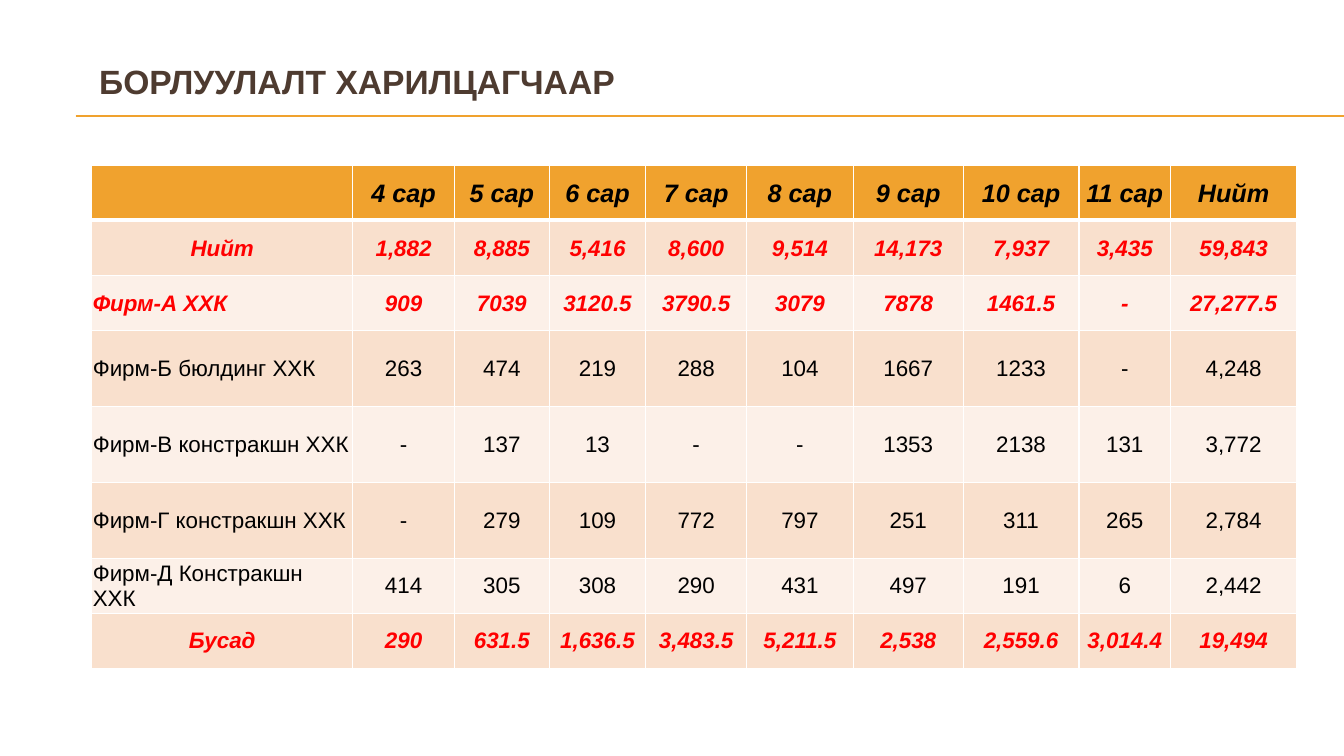
from dataclasses import dataclass

from lxml import etree
from pptx import Presentation
from pptx.dml.color import RGBColor
from pptx.enum.shapes import MSO_CONNECTOR
from pptx.enum.text import MSO_ANCHOR, PP_ALIGN
from pptx.oxml.ns import qn
from pptx.util import Emu, Inches, Pt

STRAIGHT = MSO_CONNECTOR.STRAIGHT
MIDDLE = MSO_ANCHOR.MIDDLE
LEFT, CENTER = PP_ALIGN.LEFT, PP_ALIGN.CENTER

FONT = "Arial"
ORANGE, BROWN, WHITE = "F0A22E", "4E3B30", "FFFFFF"
BLACK, RED = "000000", "FF0000"
BANDS = ("F9E0CD", "FCF0E8")

SLIDE_WIDTH, SLIDE_HEIGHT = Inches(13.33), Inches(7.5)
ROW, TALL_ROW = 7.28, 10.05  # percent of the slide's height
TABLE_WIDTH = 89.65  # percent of the slide's width
COLUMN_WEIGHTS = (259, 101, 94, 96, 100, 106, 109, 115, 91, 125)


@dataclass
class SalesRow:
    label: str
    amounts: str
    color: str = BLACK
    emphasis: bool = False
    label_align: PP_ALIGN = LEFT
    height: float = ROW
    size: int = 16


HEADER = SalesRow("", "4 сар|5 сар|6 сар|7 сар|8 сар|9 сар|10 сар|11 сар|Нийт",
                  emphasis=True, size=18)
SALES = (
    SalesRow("Нийт", "1,882|8,885|5,416|8,600|9,514|14,173|7,937|3,435|59,843",
             RED, True, CENTER),
    SalesRow("Фирм-А ХХК", "909|7039|3120.5|3790.5|3079|7878|1461.5|-|27,277.5",
             RED, True),
    SalesRow("Фирм-Б бюлдинг ХХК", "263|474|219|288|104|1667|1233|-|4,248",
             height=TALL_ROW),
    SalesRow("Фирм-В констракшн ХХК", "-|137|13|-|-|1353|2138|131|3,772",
             height=TALL_ROW),
    SalesRow("Фирм-Г констракшн ХХК", "-|279|109|772|797|251|311|265|2,784",
             height=TALL_ROW),
    SalesRow("Фирм-Д Констракшн ХХК", "414|305|308|290|431|497|191|6|2,442"),
    SalesRow("Бусад", "290|631.5|1,636.5|3,483.5|5,211.5|2,538|2,559.6|3,014.4|19,494",
             RED, True, CENTER),
)


def across(percent: float) -> Emu:
    return Emu(round(SLIDE_WIDTH * percent / 100))


def down(percent: float) -> Emu:
    return Emu(round(SLIDE_HEIGHT * percent / 100))


def rgb(color: str) -> RGBColor:
    return RGBColor.from_string(color)


def write(frame, text: str, *, size: int, color: str, bold=False, italic=False,
          align=LEFT) -> None:
    paragraph = frame.paragraphs[0]
    paragraph.alignment = align
    run = paragraph.add_run()
    run.text = text
    run.font.name = FONT
    run.font.size = Pt(size)
    run.font.bold, run.font.italic = bold, italic
    run.font.color.rgb = rgb(color)


def add_rule(slide, top: float) -> None:
    rule = slide.shapes.add_connector(STRAIGHT, across(5.63), down(top),
                                      across(100), down(top))
    rule.line.color.rgb = rgb(ORANGE)
    rule.line.width = Pt(0.75)
    etree.SubElement(rule._element.spPr, qn("a:effectLst"))


def add_title(slide, text: str) -> None:
    title = slide.shapes.add_textbox(across(2.93), down(5.73), across(94.75), down(10))
    frame = title.text_frame
    frame.word_wrap = True
    frame.vertical_anchor = MIDDLE
    frame.margin_left = across(4.45)
    write(frame, text, size=24, color=BROWN, bold=True)


def add_borders(cell, top: int, bottom: int) -> None:
    """Draw white cell borders; must run before the cell gets its fill."""
    properties = cell._tc.get_or_add_tcPr()
    for side, points in (("L", 1), ("R", 1), ("T", top), ("B", bottom)):
        border = etree.SubElement(properties, qn(f"a:ln{side}"), w=str(Pt(points)))
        fill = etree.SubElement(border, qn("a:solidFill"))
        etree.SubElement(fill, qn("a:srgbClr"), val=WHITE)


def fill_cell(cell, text: str, row: SalesRow, align: PP_ALIGN) -> None:
    cell.vertical_anchor = MIDDLE
    cell.margin_left = cell.margin_right = cell.margin_top = Inches(0.01)
    cell.margin_bottom = 0
    if text:
        write(cell.text_frame, text, size=row.size, color=row.color,
              bold=row.emphasis, italic=row.emphasis, align=align)


def add_sales_table(slide) -> None:
    rows = (HEADER, *SALES)
    height = down(sum(row.height for row in rows))
    table = slide.shapes.add_table(len(rows), len(COLUMN_WEIGHTS), across(6.83),
                                   down(21.87), across(TABLE_WIDTH), height).table
    for column, weight in zip(table.columns, COLUMN_WEIGHTS):
        column.width = across(TABLE_WIDTH * weight / sum(COLUMN_WEIGHTS))
    for r, row in enumerate(rows):
        table.rows[r].height = down(row.height)
        band = BANDS[(r - 1) % 2] if r else ORANGE
        for c, text in enumerate((row.label, *row.amounts.split("|"))):
            cell = table.cell(r, c)
            add_borders(cell, top=3 if r == 1 else 1, bottom=1 if r else 3)
            cell.fill.solid()
            cell.fill.fore_color.rgb = rgb(band)
            fill_cell(cell, text, row, CENTER if c else row.label_align)


def main() -> None:
    deck = Presentation()
    deck.slide_width, deck.slide_height = SLIDE_WIDTH, SLIDE_HEIGHT
    slide = deck.slides.add_slide(deck.slide_layouts[6])
    for top in (15.33, 15.47):
        add_rule(slide, top)
    add_title(slide, "БОРЛУУЛАЛТ ХАРИЛЦАГЧААР")
    add_sales_table(slide)
    deck.save("out.pptx")


if __name__ == "__main__":
    main()
